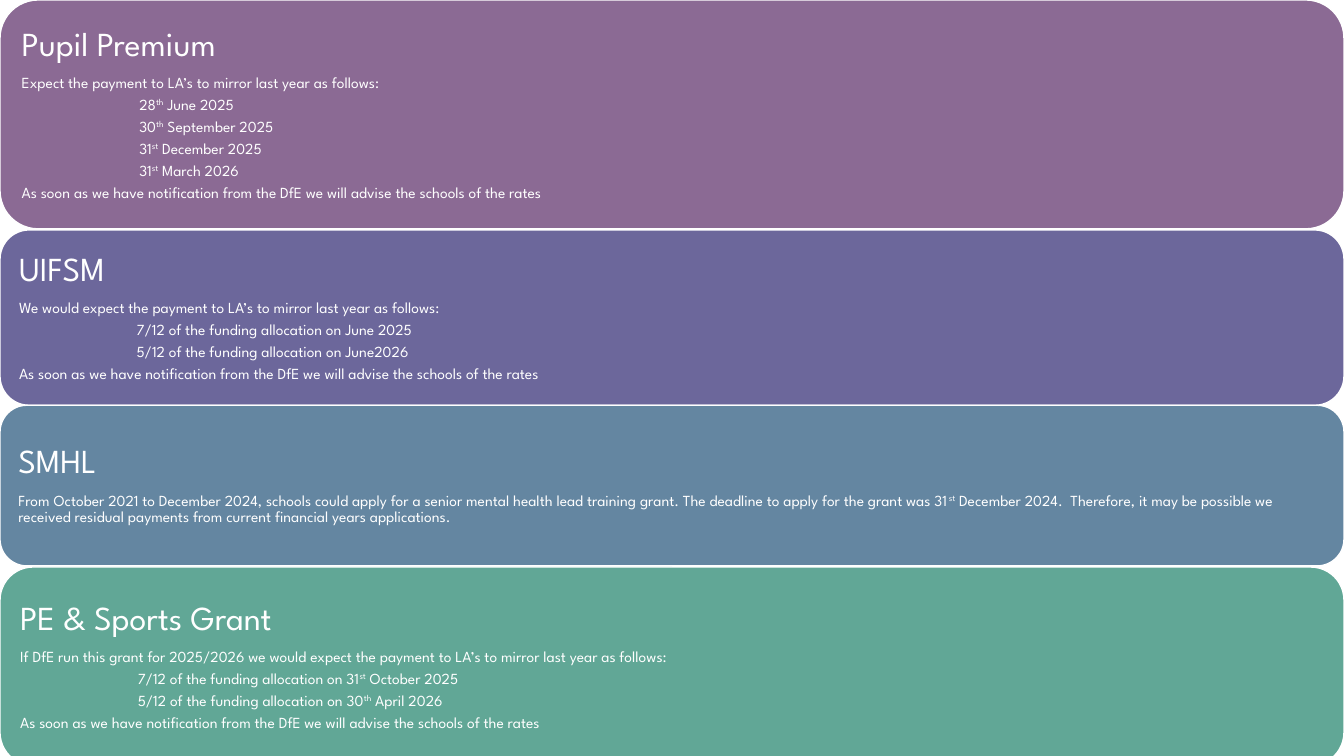
from pptx import Presentation
from pptx import util as u
from pptx.dml.color import RGBColor
from pptx.enum import shapes, text
from pptx.oxml.ns import qn
from lxml import etree

PX = 9525
RATES = "As soon as we have notification from the DfE we will advise the schools of the rates"
GRANTS = [
    (0, 218, "8B6A94", "Pupil Premium", [
        "Expect the payment to LA’s to mirror last year as follows:",
        "\t28^th^ June 2025",
        "\t30^th^ September 2025",
        "\t31^st^ December 2025",
        "\t31^st^ March 2026",
        RATES]),
    (219, 167, "6C679B", "UIFSM", [
        "We would expect the payment to LA’s to mirror last year as follows:",
        "\t7/12 of the funding allocation on June 2025",
        "\t5/12 of the funding allocation on June2026",
        RATES]),
    (386, 153, "6486A1", "SMHL", [
        "From October 2021 to December 2024, schools could apply for a senior mental health "
        "lead training grant. The deadline to apply for the grant was 31^st^ December 2024.  "
        "Therefore, it may be possible we received residual payments from current financial "
        "years applications."]),
    (540, 189, "61A796", "PE & Sports Grant", [
        "If DfE run this grant for 2025/2026 we would expect the payment to LA’s to mirror "
        "last year as follows:",
        "\t7/12 of the funding allocation on 31^st^ October 2025",
        "\t5/12 of the funding allocation on 30^th^ April 2026",
        RATES]),
]


def tint(code):
    return RGBColor.from_string(code)


class Deck:
    """Builds slides of stacked, rounded text bands in one style."""

    face, ink, wide, high = "League Spartan", "FFFFFF", 1280, 720

    def __init__(self):
        self.file = Presentation()
        self.file.slide_width = self.wide * PX
        self.file.slide_height = self.high * PX
        self.slide = self.file.slides.add_slide(self.file.slide_layouts[6])

    def band(self, top, high, fill, title, lines):
        band = self.slide.shapes.add_shape(
            shapes.MSO_SHAPE.ROUNDED_RECTANGLE, 0, top * PX, self.wide * PX, high * PX)
        band.shadow.inherit = False
        band.fill.solid()
        band.fill.fore_color.rgb = tint(fill)
        band.line.color.rgb = tint(self.ink)
        band.line.width = u.Pt(1)
        frame = band.text_frame
        frame.word_wrap = True
        frame.vertical_anchor = text.MSO_ANCHOR.MIDDLE
        frame.margin_left = frame.margin_right = 10 * PX
        frame.margin_top = frame.margin_bottom = 10 * PX
        self.line(frame.paragraphs[0], title, 24)
        for line in lines:
            self.line(frame.add_paragraph(), line, 11)

    def line(self, para, words, size):
        para.alignment = text.PP_ALIGN.LEFT
        para.line_spacing = 0.9
        para.space_after = u.Pt(size * 0.35)
        if words.startswith("\t"):
            stops = etree.SubElement(para._p.get_or_add_pPr(), qn("a:tabLst"))
            etree.SubElement(stops, qn("a:tab"), pos=str(112 * PX), algn="l")
        for spot, part in enumerate(words.split("^")):
            run = para.add_run()
            run.text = part
            run.font.name = self.face
            run.font.size = u.Pt(size)
            run.font.color.rgb = tint(self.ink)
            if spot % 2:
                run.font._element.set("baseline", "30000")


def main():
    deck = Deck()
    for grant in GRANTS:
        deck.band(*grant)
    deck.file.save("out.pptx")


if __name__ == "__main__":
    main()
